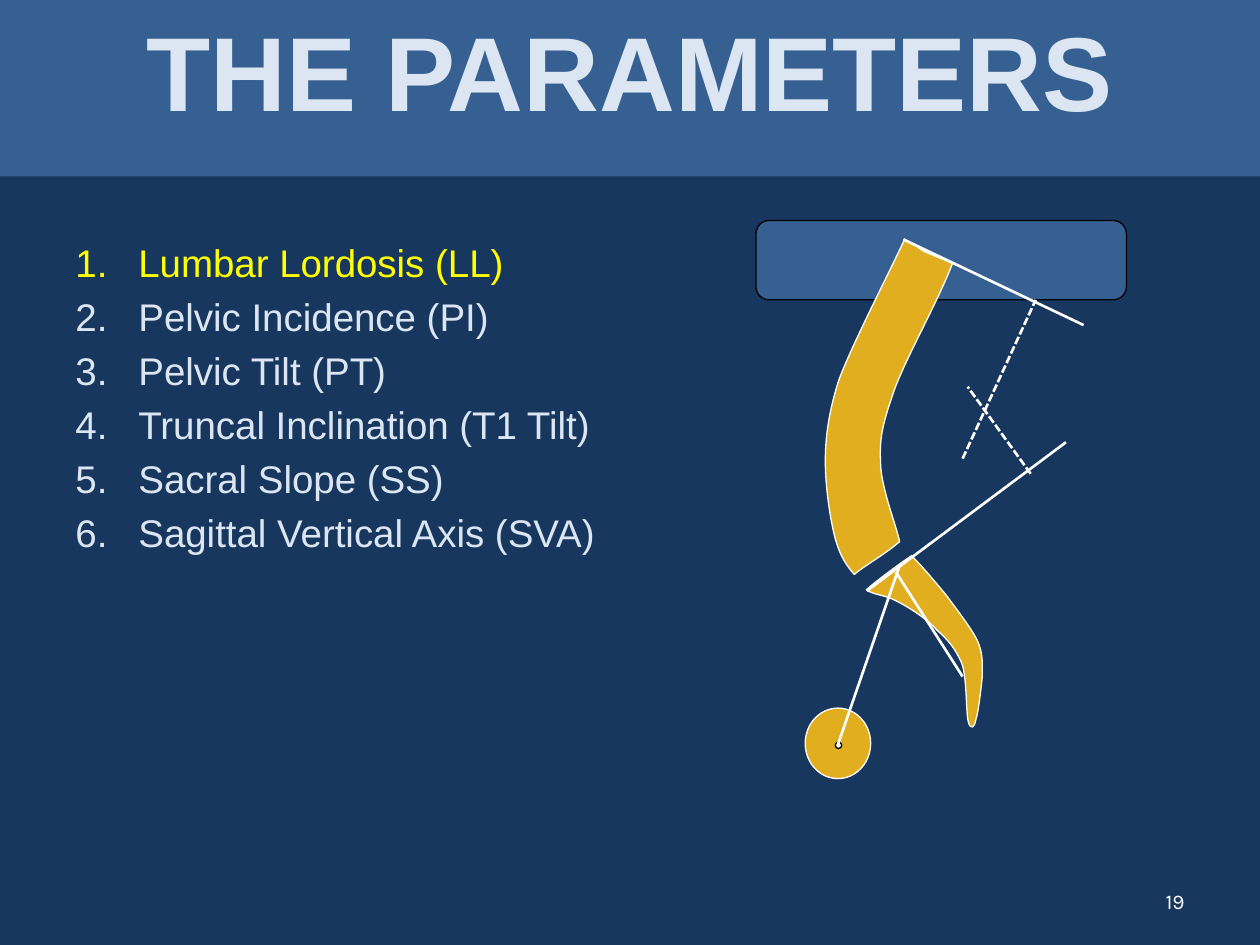
import math

from pptx import Presentation
from pptx import util as u
from pptx.dml.color import RGBColor
from pptx.enum import dml, shapes, text
from pptx.oxml.ns import qn
from lxml import etree

NAVY = RGBColor(0x17, 0x37, 0x5E)
BLUE = RGBColor(0x37, 0x60, 0x92)
BONE = RGBColor(0xE1, 0xAE, 0x1F)
PALE = RGBColor(0xDC, 0xE6, 0xF2)
YELLOW = RGBColor(0xFF, 0xFF, 0x00)
WHITE = RGBColor(0xFF, 0xFF, 0xFF)
BLACK = RGBColor(0, 0, 0)

PARAMETERS = [
    "Lumbar Lordosis (LL)",
    "Pelvic Incidence (PI)",
    "Pelvic Tilt (PT)",
    "Truncal Inclination (T1 Tilt)",
    "Sacral Slope (SS)",
    "Sagittal Vertical Axis (SVA)",
]

# Outlines: a start point, then cubic curves (two control points and an end)
SPINE_START = (7.18, 1.9)
SPINE_CURVES = [
    ((7.42, 2.03), (7.17, 1.93), (7.56, 2.09)),
    ((7.43, 2.43), (7.16, 2.89), (7.08, 3.15)),
    ((6.99, 3.41), (6.98, 3.51), (6.99, 3.7)),
    ((7, 3.89), (7.12, 4.19), (7.14, 4.3)),
    ((7.01, 4.41), (6.86, 4.49), (6.78, 4.56)),
    ((6.72, 4.49), (6.67, 4.42), (6.63, 4.28)),
    ((6.59, 4.13), (6.55, 3.87), (6.55, 3.66)),
    ((6.55, 3.46), (6.58, 3.27), (6.65, 3.04)),
    ((6.73, 2.8), (7.04, 2.2), (7.18, 1.9)),
]
SACRUM_START = (6.88, 4.68)
SACRUM_CURVES = [
    ((6.93, 4.72), (7.03, 4.72), (7.12, 4.77)),
    ((7.22, 4.82), (7.36, 4.91), (7.44, 5)),
    ((7.53, 5.08), (7.59, 5.15), (7.64, 5.27)),
    ((7.68, 5.39), (7.67, 5.66), (7.69, 5.73)),
    ((7.71, 5.8), (7.74, 5.77), (7.75, 5.71)),
    ((7.77, 5.65), (7.79, 5.47), (7.8, 5.37)),
    ((7.8, 5.27), (7.81, 5.19), (7.76, 5.08)),
    ((7.71, 4.98), (7.6, 4.84), (7.52, 4.73)),
    ((7.43, 4.62), (7.32, 4.49), (7.24, 4.41)),
    ((7.16, 4.46), (6.96, 4.61), (6.88, 4.68)),
]
SACRUM_CENTER = (7.34, 5.09)
SACRUM_TILT = 7.1


def style_shape(shape, fill, line=None):
    shape.shadow.inherit = False
    shape.fill.solid()
    shape.fill.fore_color.rgb = fill
    if line is None:
        shape.line.fill.background()
    else:
        shape.line.color.rgb = line
        shape.line.width = u.Pt(0.75)


def add_preset(slide, kind, box, fill, line=None):
    shape = slide.shapes.add_shape(kind, *map(u.Inches, box))
    style_shape(shape, fill, line)
    return shape


def turn_back(point, center, degrees):
    """Place a point of a tilted outline where it lies before the tilt."""
    cosine, sine = math.cos(math.radians(degrees)), math.sin(math.radians(degrees))
    dx, dy = point[0] - center[0], point[1] - center[1]
    return (u.Inches(center[0] + dx * cosine + dy * sine),
            u.Inches(center[1] - dx * sine + dy * cosine))


def add_bone(slide, start, curves, center=(0, 0), tilt=0):
    start = turn_back(start, center, tilt)
    curves = [[turn_back(point, center, tilt) for point in curve] for curve in curves]
    builder = slide.shapes.build_freeform(*start)
    builder.add_line_segments([curve[-1] for curve in curves], close=True)
    bone = builder.convert_to_shape()
    # Bend each straight segment into its cubic curve
    segments = list(bone._element.iter(qn("a:lnTo")))
    for segment, curve in zip(segments, curves):
        bend = etree.Element(qn("a:cubicBezTo"))
        for x, y in curve:
            etree.SubElement(bend, qn("a:pt"), x=str(x - bone.left), y=str(y - bone.top))
        segment.getparent().replace(segment, bend)
    bone.rotation = tilt
    style_shape(bone, BONE, WHITE)


def add_line(slide, start, end, dashed=False):
    line = slide.shapes.add_connector(
        shapes.MSO_CONNECTOR.STRAIGHT, *map(u.Inches, (*start, *end)))
    line.line.color.rgb = WHITE
    line.line.width = u.Pt(1.5)
    if dashed:
        line.line.dash_style = dml.MSO_LINE.SQUARE_DOT
    etree.SubElement(line._element.spPr, qn("a:effectLst"))


def add_run(paragraph, words, size, color, font="Arial", bold=False):
    run = paragraph.add_run()
    run.text = words
    run.font.name = font
    run.font.size = u.Pt(size)
    run.font.bold = bold
    run.font.color.rgb = color


def add_text_box(slide, box):
    frame = slide.shapes.add_textbox(*map(u.Inches, box)).text_frame
    frame.word_wrap = True
    return frame


def add_numbered_list(slide, box, items):
    frame = add_text_box(slide, box)
    for index, item in enumerate(items):
        paragraph = frame.add_paragraph() if index else frame.paragraphs[0]
        properties = paragraph._p.get_or_add_pPr()
        properties.set("marL", str(u.Inches(0.5)))
        properties.set("indent", str(-u.Inches(0.5)))
        etree.SubElement(properties, qn("a:buFont"), typeface="Arial")
        etree.SubElement(properties, qn("a:buAutoNum"), type="arabicPeriod")
        if index:
            paragraph.space_before = u.Pt(4.4)
        add_run(paragraph, item, 22, PALE if index else YELLOW)


def add_title(slide, words):
    banner = add_preset(slide, shapes.MSO_SHAPE.RECTANGLE, (0, 0, 10, 1.4), BLUE)
    frame = banner.text_frame
    frame.vertical_anchor = text.MSO_ANCHOR.TOP
    frame.paragraphs[0].alignment = text.PP_ALIGN.CENTER
    add_run(frame.paragraphs[0], words, 60, PALE, bold=True)


def add_page_number(slide, number):
    frame = add_text_box(slide, (7.17, 6.95, 2.33, 0.4))
    frame.vertical_anchor = text.MSO_ANCHOR.MIDDLE
    frame.paragraphs[0].alignment = text.PP_ALIGN.RIGHT
    add_run(frame.paragraphs[0], number, 12, WHITE, font="Karla")


def add_spine_diagram(slide):
    kinds = shapes.MSO_SHAPE
    # Panel and femoral head with its centre
    add_preset(slide, kinds.ROUNDED_RECTANGLE, (6, 1.75, 2.94, 0.63), BLUE, BLACK)
    add_preset(slide, kinds.OVAL, (6.39, 5.62, 0.52, 0.56), BONE, WHITE)
    add_preset(slide, kinds.OVAL, (6.63, 5.89, 0.05, 0.05), WHITE, BLACK)
    # Lumbar spine and its upper endplate
    add_bone(slide, SPINE_START, SPINE_CURVES)
    add_line(slide, (7.17, 1.9), (8.6, 2.58))
    # Sacrum, its normal and its endplate
    add_bone(slide, SACRUM_START, SACRUM_CURVES, SACRUM_CENTER, SACRUM_TILT)
    add_line(slide, (7.11, 4.54), (7.64, 5.37))
    add_line(slide, (6.88, 4.69), (8.46, 3.51))
    # Lordosis angle
    add_line(slide, (8.18, 3.76), (7.68, 3.07), dashed=True)
    add_line(slide, (7.64, 3.64), (8.22, 2.38), dashed=True)
    # Femoral head to sacrum
    add_line(slide, (6.65, 5.91), (7.14, 4.49))


def main():
    presentation = Presentation()
    presentation.slide_width = u.Inches(10)
    presentation.slide_height = u.Inches(7.5)
    slide = presentation.slides.add_slide(presentation.slide_layouts[6])
    slide.background.fill.solid()
    slide.background.fill.fore_color.rgb = NAVY

    add_numbered_list(slide, (0.5, 1.85, 8.81, 4), PARAMETERS)
    add_page_number(slide, "19")
    add_spine_diagram(slide)
    add_title(slide, "THE PARAMETERS")
    presentation.save("out.pptx")


if __name__ == "__main__":
    main()
